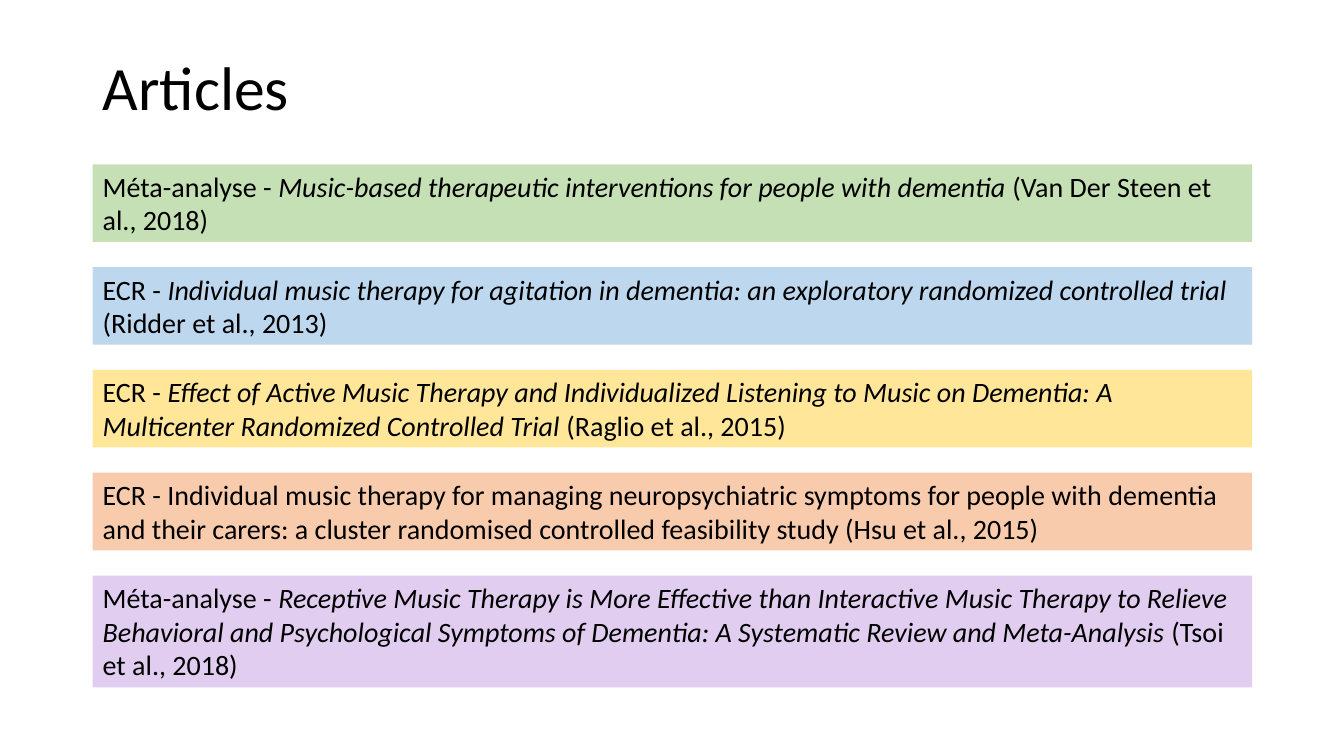
from pptx import Presentation
from pptx import util as u
from pptx.dml.color import RGBColor
from pptx.enum import shapes, text

TITLE = "Articles"
# fill, then text pieces: (words, italic)
ARTICLES = [
    ("C5E0B4", [
        ("Méta-analyse - ", False),
        ("Music-based therapeutic interventions for people with dementia ", True),
        ("(Van Der Steen et al., 2018)", False)]),
    ("BDD7EE", [
        ("ECR - ", False),
        ("Individual music therapy for agitation in dementia: "
         "an exploratory randomized controlled trial ", True),
        ("(Ridder et al., 2013)", False)]),
    ("FFE699", [
        ("ECR - ", False),
        ("Effect of Active Music Therapy and Individualized Listening to Music "
         "on Dementia: A Multicenter Randomized Controlled Trial ", True),
        ("(Raglio et al., 2015)", False)]),
    ("F8CBAD", [
        ("ECR - Individual music therapy for managing neuropsychiatric symptoms "
         "for people with dementia and their carers: a cluster randomised "
         "controlled feasibility study (Hsu et al., 2015)", False)]),
    ("E0CDEF", [
        ("Méta-analyse - ", False),
        ("Receptive Music Therapy is More Effective than Interactive Music Therapy "
         "to Relieve Behavioral and Psychological Symptoms of Dementia: "
         "A Systematic Review and Meta-Analysis ", True),
        ("(Tsoi et al., 2018)", False)]),
]

WIDTH, HEIGHT = 13.33, 7.5
LEFT, COLUMN = 0.92, 11.5
TITLE_TOP, TITLE_HEIGHT = 0.4, 0.99
FIRST_TOP, PITCH = 1.63, 1.02
BAND_HEIGHT, EXTRA_LINE = 0.77, 0.34
FONT = "Calibri"


def color(code):
    return RGBColor.from_string(code)


def inches(*lengths):
    return [u.Inches(length) for length in lengths]


def write(shape, pieces, size, anchor, spacing=1.0):
    """Fill the shape with one left-aligned paragraph of (words, italic) pieces."""
    frame = shape.text_frame
    frame.word_wrap = True
    frame.vertical_anchor = anchor
    paragraph = frame.paragraphs[0]
    paragraph.alignment = text.PP_ALIGN.LEFT
    paragraph.line_spacing = spacing
    for words, italic in pieces:
        run = paragraph.add_run()
        run.text = words
        run.font.color.rgb = color("000000")
        for name, value in {"name": FONT, "size": u.Pt(size), "italic": italic}.items():
            setattr(run.font, name, value)


def add_band(slide, top, height, fill, pieces):
    band = slide.shapes.add_shape(
        shapes.MSO_SHAPE.RECTANGLE, *inches(LEFT, top, COLUMN, height))
    band.shadow.inherit = False
    band.fill.solid()
    band.fill.fore_color.rgb = color(fill)
    band.line.fill.background()
    write(band, pieces, 20, text.MSO_ANCHOR.TOP)


def main():
    presentation = Presentation()
    presentation.slide_width, presentation.slide_height = inches(WIDTH, HEIGHT)
    slide = presentation.slides.add_slide(presentation.slide_layouts[6])

    title = slide.shapes.add_textbox(*inches(LEFT, TITLE_TOP, COLUMN, TITLE_HEIGHT))
    write(title, [(TITLE, False)], 44, text.MSO_ANCHOR.MIDDLE, spacing=0.9)

    last = len(ARTICLES) - 1
    for row, (fill, pieces) in enumerate(ARTICLES):
        height = BAND_HEIGHT + (EXTRA_LINE if row == last else 0)
        add_band(slide, FIRST_TOP + row * PITCH, height, fill, pieces)

    presentation.save("out.pptx")


if __name__ == "__main__":
    main()
